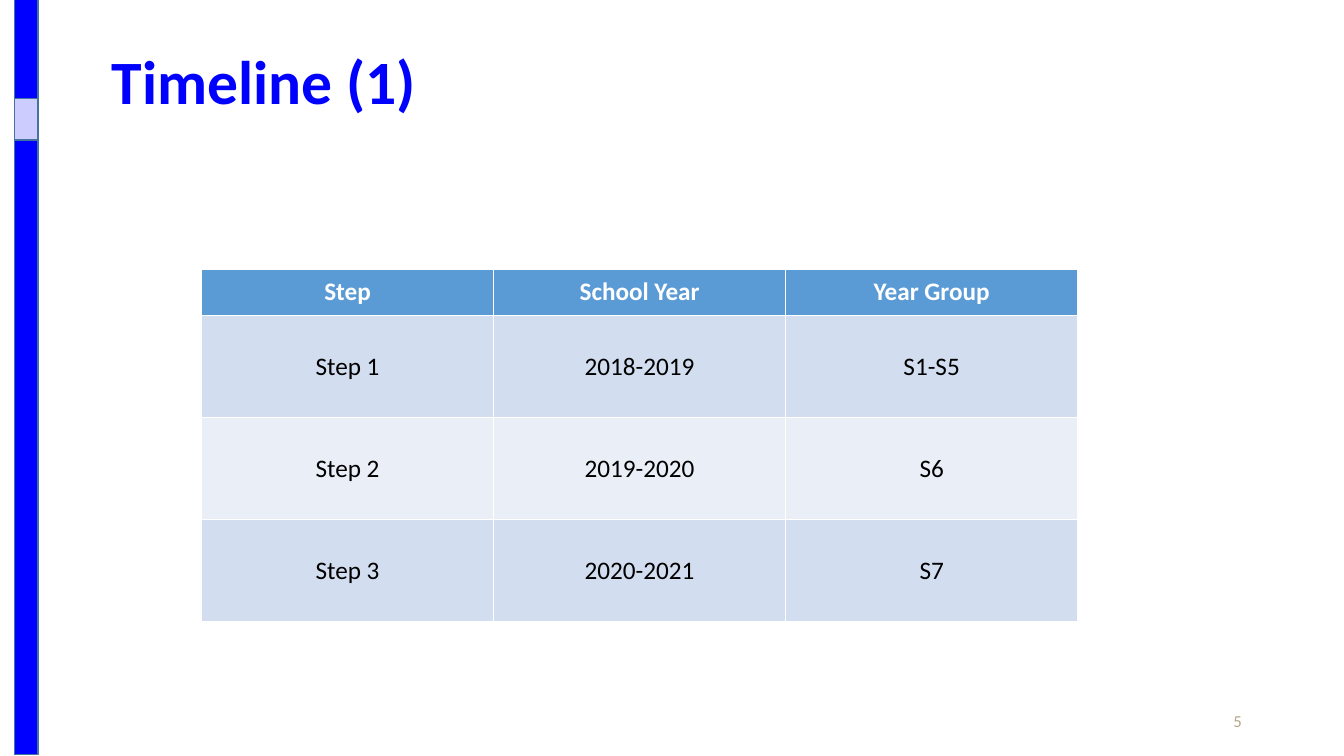
from dataclasses import dataclass

from pptx import Presentation
from pptx.dml.color import RGBColor
from pptx.enum.shapes import MSO_SHAPE
from pptx.enum.text import MSO_ANCHOR, MSO_AUTO_SIZE, PP_ALIGN
from pptx.util import Cm, Pt

RECTANGLE = MSO_SHAPE.RECTANGLE
MIDDLE = MSO_ANCHOR.MIDDLE
NO_AUTOFIT = MSO_AUTO_SIZE.NONE
LEFT, CENTER, RIGHT = PP_ALIGN.LEFT, PP_ALIGN.CENTER, PP_ALIGN.RIGHT

FONT = "Calibri"
BLUE = "0000FF"
BAND_FILLS = ("D2DEEF", "EAEFF7")
HEADER_HEIGHT, STEP_HEIGHT, COLUMN_WIDTH = 1.17, 2.57, 7.36

TIMELINE = [
    ("Step", "School Year", "Year Group"),
    ("Step 1", "2018-2019", "S1-S5"),
    ("Step 2", "2019-2020", "S6"),
    ("Step 3", "2020-2021", "S7"),
]


@dataclass
class Bar:
    top: float
    height: float
    fill: str


SIDE_BARS = [Bar(-0.03, 19.05, BLUE), Bar(2.49, 1.04, "CCCCFF")]


def color(hex_code: str) -> RGBColor:
    return RGBColor.from_string(hex_code)


def write(frame, text: str, size: float, hex_code: str, align, bold: bool = False) -> None:
    """Put one formatted, vertically centred paragraph into a text frame."""
    frame.text = text
    frame.word_wrap = True
    frame.vertical_anchor = MIDDLE
    paragraph = frame.paragraphs[0]
    paragraph.alignment = align
    font = paragraph.font
    font.name, font.size, font.bold = FONT, Pt(size), bold
    font.color.rgb = color(hex_code)


def add_title(slide) -> None:
    title = slide.shapes.title
    title.left, title.top, title.width, title.height = Cm(2.34), Cm(0.28), Cm(29.21), Cm(3.68)
    write(title.text_frame, "Timeline (1)", 44, BLUE, LEFT, bold=True)
    title.text_frame.auto_size = NO_AUTOFIT
    title.text_frame.margin_left = Cm(0.48)
    title.text_frame.paragraphs[0].line_spacing = 0.9


def add_page_number(slide) -> None:
    page_number = slide.shapes.add_textbox(Cm(23.93), Cm(17.65), Cm(7.62), Cm(1.02))
    write(page_number.text_frame, "5", 12, "B5A788", RIGHT)


def add_timeline(slide) -> None:
    rows, columns = len(TIMELINE), len(TIMELINE[0])
    timeline = slide.shapes.add_table(
        rows, columns, Cm(5.08), Cm(6.78), Cm(columns * COLUMN_WIDTH),
        Cm(HEADER_HEIGHT + (rows - 1) * STEP_HEIGHT),
    ).table
    for column in timeline.columns:
        column.width = Cm(COLUMN_WIDTH)
    for index, entries in enumerate(TIMELINE):
        is_header = index == 0
        timeline.rows[index].height = Cm(HEADER_HEIGHT if is_header else STEP_HEIGHT)
        fill = "5B9BD5" if is_header else BAND_FILLS[(index - 1) % 2]
        for cell, entry in zip(timeline.rows[index].cells, entries):
            cell.fill.solid()
            cell.fill.fore_color.rgb = color(fill)
            cell.vertical_anchor = MIDDLE
            write(cell.text_frame, entry, 18, "FFFFFF" if is_header else "000000",
                  CENTER, bold=is_header)


def add_side_bar(slide, bar: Bar) -> None:
    shape = slide.shapes.add_shape(RECTANGLE, Cm(0.36), Cm(bar.top), Cm(0.6), Cm(bar.height))
    shape.shadow.inherit = False
    shape.fill.solid()
    shape.fill.fore_color.rgb = color(bar.fill)
    shape.line.color.rgb = color("43739E")
    shape.line.width = Pt(1)


def main() -> None:
    deck = Presentation()
    deck.slide_width, deck.slide_height = Cm(33.87), Cm(19.05)
    slide = deck.slides.add_slide(deck.slide_layouts.get_by_name("Title Only"))
    add_title(slide)
    add_page_number(slide)
    add_timeline(slide)
    for bar in SIDE_BARS:
        add_side_bar(slide, bar)
    deck.save("out.pptx")


if __name__ == "__main__":
    main()
